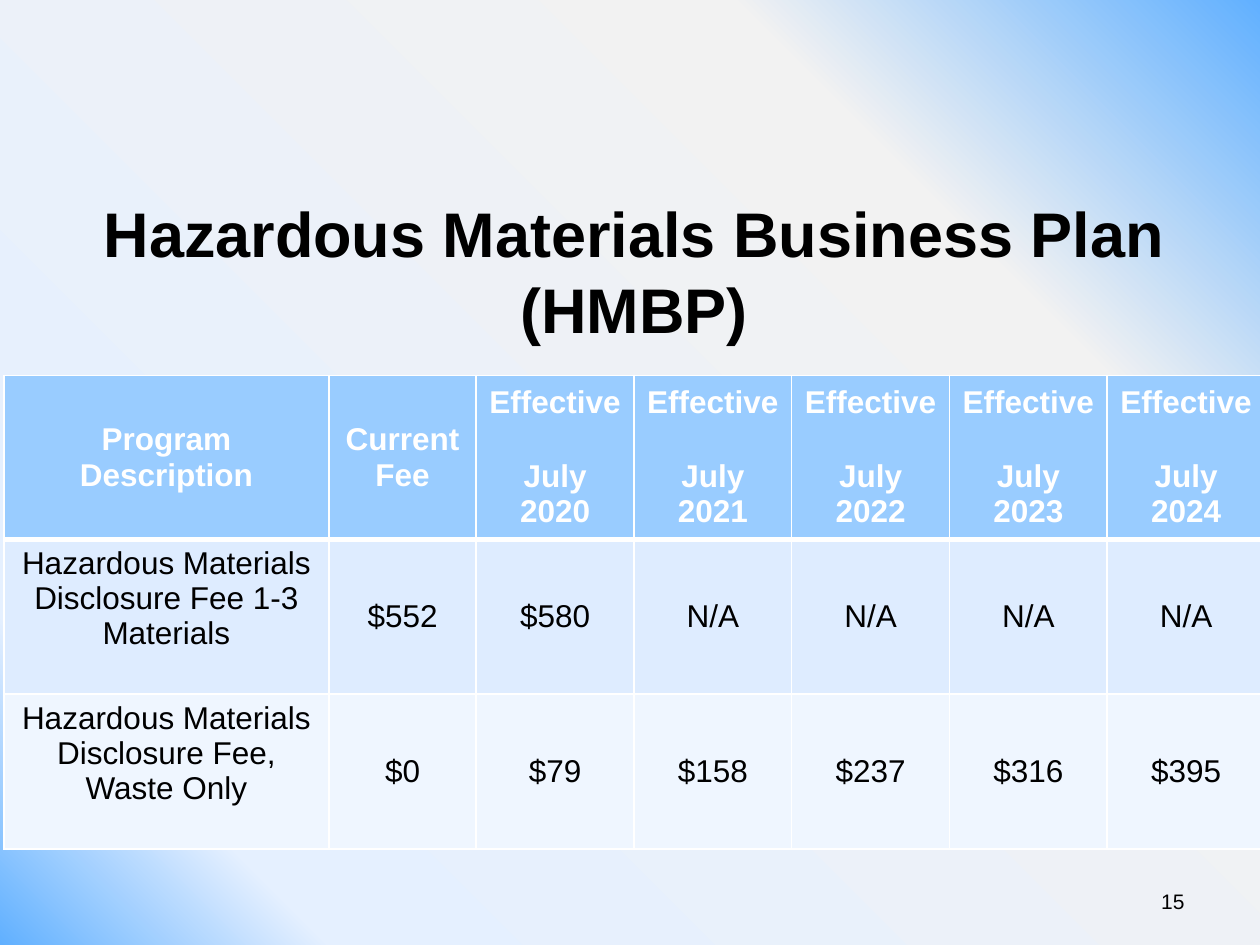
from lxml import etree
from pptx import Presentation
from pptx.dml.color import RGBColor
from pptx.enum.text import MSO_ANCHOR, PP_ALIGN
from pptx.oxml.ns import qn
from pptx.util import Cm, Pt

CENTER, RIGHT = PP_ALIGN.CENTER, PP_ALIGN.RIGHT
TOP, MIDDLE = MSO_ANCHOR.TOP, MSO_ANCHOR.MIDDLE

BLACK = RGBColor(0x00, 0x00, 0x00)
WHITE = RGBColor(0xFF, 0xFF, 0xFF)
SKY = RGBColor(0x61, 0xB0, 0xFF)
MIST = RGBColor(0xE5, 0xF0, 0xFF)
PEARL = RGBColor(0xF2, 0xF2, 0xF2)
HEADER_BLUE = RGBColor(0x99, 0xCC, 0xFF)
ROW_BLUE = RGBColor(0xDE, 0xEC, 0xFF)
ROW_PALE = RGBColor(0xEF, 0xF6, 0xFF)

BACKDROP = [(0, SKY), (15, MIST), (76, PEARL), (100, SKY)]
BANDS = [HEADER_BLUE, ROW_BLUE, ROW_PALE]
COLUMN_WIDTHS = [6.55, 2.97] + [3.18] * 5
ROW_HEIGHTS = [2.87, 3.12, 3.12]
FEES = [
    ["Program Description", "Current Fee"]
    + [f"Effective \vJuly {year}" for year in range(2020, 2025)],
    ["Hazardous Materials Disclosure Fee 1-3 Materials", "$552", "$580"] + ["N/A"] * 4,
    ["Hazardous Materials Disclosure Fee, Waste Only", "$0"]
    + [f"${79 * step}" for step in range(1, 6)],
]


class FeeSlide:
    """Holds the text style and the current slide, and adds each kind of element."""

    style = {"name": "Arial", "size": Pt(18), "bold": False}

    def __init__(self, deck):
        self.slide = deck.slides.add_slide(deck.slide_layouts[6])

    def backdrop(self, stops, angle):
        fill = self.slide.background.fill
        fill.gradient()
        fill.gradient_angle = angle
        stop_list = next(self.slide.element.iter(qn("a:gsLst")))
        for stop in list(stop_list):
            stop_list.remove(stop)
        for percent, color in stops:
            stop = etree.SubElement(stop_list, qn("a:gs"), pos=str(percent * 1000))
            etree.SubElement(stop, qn("a:srgbClr"), val=str(color))

    def wording(self, frame, content, color=BLACK, align=CENTER, **changes):
        frame.text = content
        paragraph = frame.paragraphs[0]
        paragraph.alignment = align
        for run in paragraph.runs:
            for key, value in {**self.style, **changes}.items():
                setattr(run.font, key, value)
            run.font.color.rgb = color

    def text(self, content, left, top, width, height, anchor=TOP, **changes):
        box = self.slide.shapes.add_textbox(Cm(left), Cm(top), Cm(width), Cm(height))
        box.text_frame.word_wrap = True
        box.text_frame.vertical_anchor = anchor
        self.wording(box.text_frame, content, **changes)

    def borders(self, cell, top, bottom):
        properties = cell._tc.get_or_add_tcPr()
        for side, points in {"L": 1, "R": 1, "T": top, "B": bottom}.items():
            line = etree.SubElement(properties, qn(f"a:ln{side}"), w=str(Pt(points)))
            fill = etree.SubElement(line, qn("a:solidFill"))
            etree.SubElement(fill, qn("a:srgbClr"), val=str(WHITE))

    def table(self, rows, left, top, widths, heights, bands):
        table = self.slide.shapes.add_table(
            len(rows), len(widths), Cm(left), Cm(top), Cm(sum(widths)), Cm(sum(heights))
        ).table
        for column, width in zip(table.columns, widths):
            column.width = Cm(width)
        for row, height in zip(table.rows, heights):
            row.height = Cm(height)
        for r, (row, band) in enumerate(zip(rows, bands)):
            header = r == 0
            for c, content in enumerate(row):
                cell = table.cell(r, c)
                cell.vertical_anchor = MIDDLE if header or c else TOP
                self.borders(cell, top=3 if r == 1 else 1, bottom=3 if header else 1)
                cell.fill.solid()
                cell.fill.fore_color.rgb = band
                self.wording(cell.text_frame, content, WHITE if header else BLACK, bold=header)


def main():
    deck = Presentation()
    deck.slide_width, deck.slide_height = Cm(25.4), Cm(19.05)
    page = FeeSlide(deck)
    page.backdrop(BACKDROP, 45)
    page.text("Hazardous Materials Business Plan (HMBP)", 1.35, 3.86, 22.86, 3.18,
              anchor=MIDDLE, size=Pt(36), bold=True)
    page.text("15", 18.21, 17.78, 5.92, 0.86, align=RIGHT, size=Pt(12))
    page.table(FEES, 0.08, 7.57, COLUMN_WIDTHS, ROW_HEIGHTS, BANDS)
    deck.save("out.pptx")


if __name__ == "__main__":
    main()
